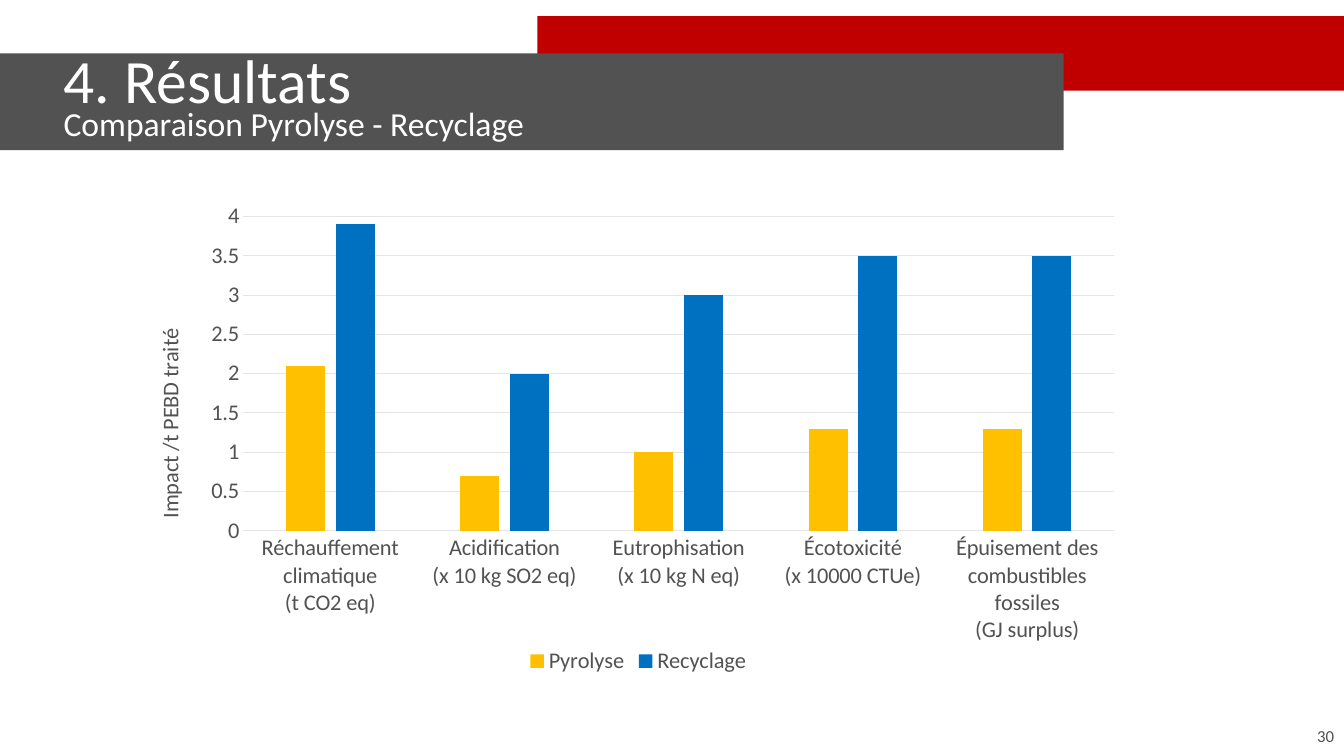
"""Build the results slide comparing pyrolysis and recycling impacts."""
from lxml.etree import SubElement
from pptx import Presentation
from pptx.chart.data import CategoryChartData
from pptx.dml.color import RGBColor
from pptx.enum.chart import XL_CHART_TYPE as ChartType
from pptx.enum.chart import XL_LEGEND_POSITION as LegendPosition
from pptx.enum.chart import XL_TICK_MARK as TickMark
from pptx.enum.shapes import MSO_SHAPE as Shape
from pptx.enum.text import MSO_ANCHOR as Anchor
from pptx.enum.text import MSO_AUTO_SIZE as AutoSize
from pptx.enum.text import PP_ALIGN as Align
from pptx.oxml import parse_xml
from pptx.oxml.ns import nsdecls, qn
from pptx.util import Inches, Pt

RED = RGBColor(0xC0, 0x00, 0x00)
GREY = RGBColor(0x52, 0x52, 0x52)
PALE = RGBColor(0xE5, 0xE5, 0xE5)
WHITE = RGBColor(0xFF, 0xFF, 0xFF)
YELLOW = RGBColor(0xFF, 0xC0, 0x00)
BLUE = RGBColor(0x00, 0x70, 0xC0)
FONT = "Calibri"

WIDTH, HEIGHT = 13.33, 7.5
HEADING = [("4. Résultats", 44), ("Comparaison Pyrolyse - Recyclage", 24)]
PAGE_NUMBER = "30"
IMPACTS = [
    ("Réchauffement climatique\n(t CO2 eq)", 2.1, 3.9),
    ("Acidification\n(x 10 kg SO2 eq)", 0.7, 2),
    ("Eutrophisation\n(x 10 kg N eq)", 1, 3),
    ("Écotoxicité\n(x 10000 CTUe)", 1.3, 3.5),
    ("Épuisement des combustibles fossiles\n(GJ surplus)", 1.3, 3.5),
]
TREATMENTS = [("Pyrolyse", YELLOW), ("Recyclage", BLUE)]
AXIS_TITLE = "Impact /t PEBD traité"
BANDS = [((5.33, 0.16, WIDTH - 5.33, 0.74), RED), ((0, 0.53, 10.55, 0.96), GREY)]
TITLE_BOX = (0.53, 0.35, 10.03, 1.32)
NUMBER_BOX = (WIDTH - 3, HEIGHT - 0.4, 3, 0.4)
CHART_BOX = (1.37, 1.88, 9.92, 4.86)
PLOT_SHARES = {"x": 0.105, "y": 0.055, "w": 0.871, "h": 0.642}


def inches(box):
    return [Inches(length) for length in box]


def style(font, size, color):
    font.name, font.size, font.bold = FONT, Pt(size), False
    font.color.rgb = color


def add_bands(slide):
    for box, color in BANDS:
        band = slide.shapes.add_shape(Shape.RECTANGLE, *inches(box))
        band.shadow.inherit = False
        band.fill.solid()
        band.fill.fore_color.rgb = color
        band.line.fill.background()


def fill_title(slide):
    title = slide.shapes.title
    title.left, title.top, title.width, title.height = inches(TITLE_BOX)
    frame = title.text_frame
    frame.auto_size, frame.word_wrap = AutoSize.NONE, True
    frame.vertical_anchor = Anchor.MIDDLE
    heading = frame.paragraphs[0]
    heading.alignment, heading.line_spacing = Align.LEFT, 0.7
    for index, (words, size) in enumerate(HEADING):
        if index:
            heading.add_line_break()
        run = heading.add_run()
        run.text = words
        style(run.font, size, WHITE)
    slide.shapes._spTree.append(title._element)


def add_page_number(slide):
    frame = slide.shapes.add_textbox(*inches(NUMBER_BOX)).text_frame
    frame.word_wrap, frame.vertical_anchor = True, Anchor.MIDDLE
    number = frame.paragraphs[0]
    number.alignment = Align.RIGHT
    run = number.add_run()
    run.text = PAGE_NUMBER
    style(run.font, 12, GREY)


def place_plot(chart):
    plot_area = chart._chartSpace.chart.plotArea
    for old in plot_area.findall(qn("c:layout")):
        plot_area.remove(old)
    layout = parse_xml(f"<c:layout {nsdecls('c')}/>")
    manual = SubElement(layout, qn("c:manualLayout"))
    settings = {"layoutTarget": "inner", "xMode": "edge", "yMode": "edge", **PLOT_SHARES}
    for tag, value in settings.items():
        SubElement(manual, qn(f"c:{tag}")).set("val", str(value))
    plot_area.insert(0, layout)


def add_impact_chart(slide):
    names, *columns = zip(*IMPACTS)
    impacts = CategoryChartData()
    impacts.categories = names
    for (treatment, _), values in zip(TREATMENTS, columns):
        impacts.add_series(treatment, values)
    chart = slide.shapes.add_chart(
        ChartType.COLUMN_CLUSTERED, *inches(CHART_BOX), impacts).chart
    style(chart.font, 16, GREY)
    chart.has_title = False
    chart.has_legend = True
    chart.legend.position = LegendPosition.BOTTOM
    chart.legend.include_in_layout = False

    bars = chart.plots[0]
    bars.gap_width, bars.overlap, bars.vary_by_categories = 219, -27, False
    for series, (_, color) in zip(bars.series, TREATMENTS):
        series.format.fill.solid()
        series.format.fill.fore_color.rgb = color

    impact_axis, category_axis = chart.value_axis, chart.category_axis
    for axis in (impact_axis, category_axis):
        axis.major_tick_mark = axis.minor_tick_mark = TickMark.NONE
    impact_axis.minimum_scale, impact_axis.maximum_scale = 0, 4
    impact_axis.major_unit = 0.5
    impact_axis.format.line.fill.background()
    for line in (category_axis.format.line, impact_axis.major_gridlines.format.line):
        line.color.rgb = PALE
        line.width = Pt(0.75)

    frame = impact_axis.axis_title.text_frame
    frame._txBody.bodyPr.set("rot", "-5400000")
    frame._txBody.bodyPr.set("vert", "horz")
    run = frame.paragraphs[0].add_run()
    run.text = AXIS_TITLE
    style(run.font, 16, GREY)
    place_plot(chart)


def main():
    deck = Presentation()
    deck.slide_width, deck.slide_height = inches((WIDTH, HEIGHT))
    slide = deck.slides.add_slide(deck.slide_layouts[5])
    add_bands(slide)
    fill_title(slide)
    add_page_number(slide)
    add_impact_chart(slide)
    deck.save("out.pptx")


if __name__ == "__main__":
    main()
